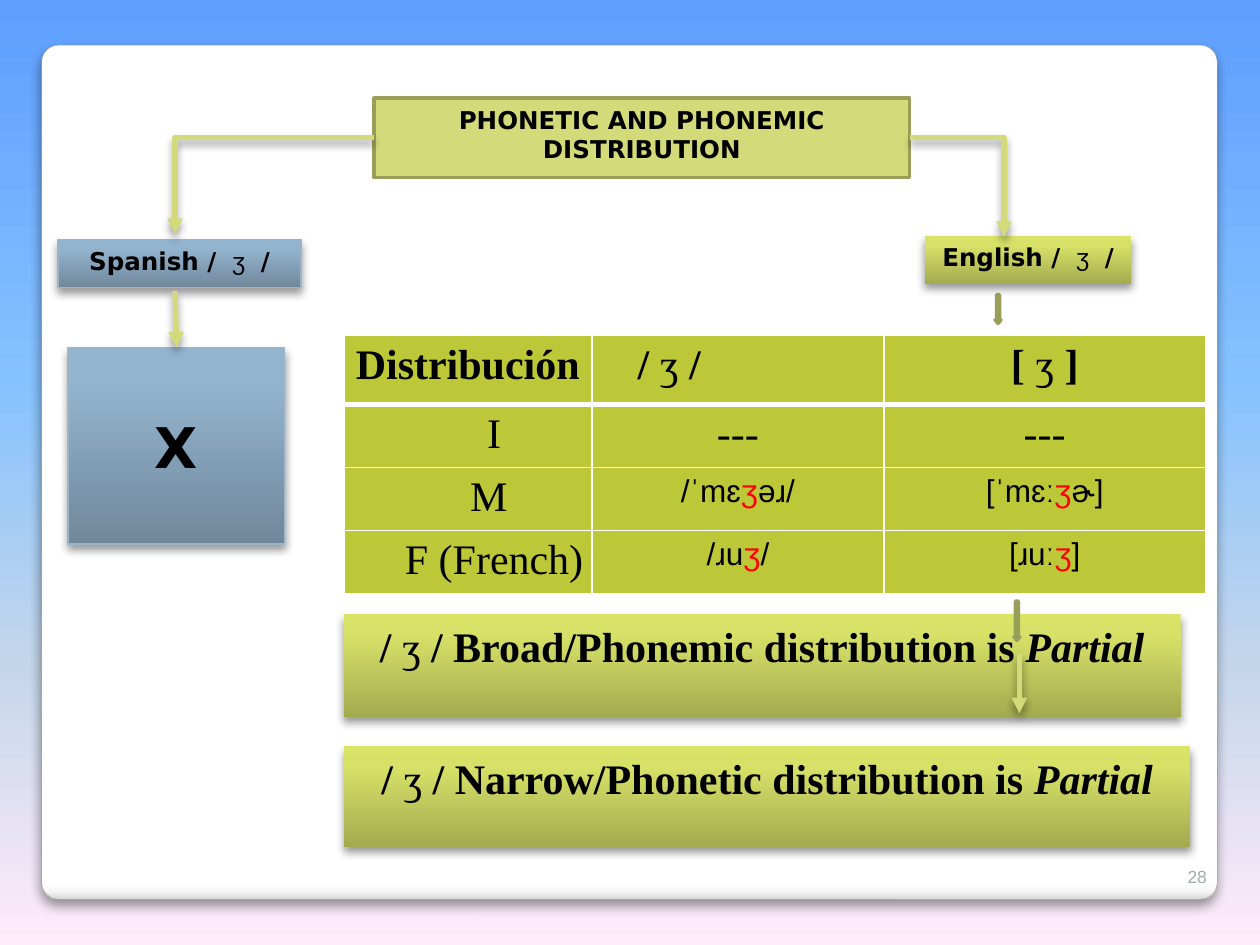
from dataclasses import dataclass

from lxml.etree import SubElement
from pptx import Presentation
from pptx.dml.color import RGBColor
from pptx.enum.shapes import MSO_CONNECTOR, MSO_SHAPE
from pptx.enum.text import MSO_ANCHOR, PP_ALIGN
from pptx.oxml.ns import qn
from pptx.util import Cm, Pt

BLACK = RGBColor(0, 0, 0)
WHITE = RGBColor(255, 255, 255)
RED = RGBColor(255, 0, 0)
PALE_GREEN = RGBColor(0xD2, 0xDA, 0x7A)
OLIVE = RGBColor(0x99, 0x9F, 0x59)
TABLE_GREEN = RGBColor(0xBC, 0xC8, 0x38)
BLUE_EDGE = RGBColor(0x9A, 0xB4, 0xC9)
PANEL_EDGE = RGBColor(0xA2, 0xA1, 0xA1)
NUMBER_GRAY = RGBColor(0xA1, 0xAA, 0xAC)
SKY = [(0, RGBColor(0x5E, 0x9E, 0xFF)), (40, RGBColor(0x85, 0xC2, 0xFF)),
       (70, RGBColor(0xC4, 0xD6, 0xEB)), (100, RGBColor(0xFF, 0xEB, 0xFA))]
PAPER = [(0, WHITE), (98, WHITE), (99, RGBColor(0xF7, 0xF7, 0xF7)),
         (100, RGBColor(0xD9, 0xD9, 0xD9))]
BLUE = [(0, RGBColor(0x93, 0xB4, 0xCF)), (20, RGBColor(0x93, 0xB3, 0xCD)),
        (100, RGBColor(0x70, 0x88, 0x9C))]
GREEN = [(0, RGBColor(0xDA, 0xE4, 0x66)), (20, RGBColor(0xD7, 0xE1, 0x68)),
         (100, RGBColor(0xA3, 0xAB, 0x4F))]
SANS, SERIF, MONO, ARIAL = "DejaVu Sans", "Times New Roman", "Courier New", "Arial"
INSET = 0.13


@dataclass
class Run:
    text: str
    size: float
    font: str
    bold: bool = False
    italic: bool = False
    color: RGBColor = BLACK


@dataclass
class Box:
    left: float
    top: float
    width: float
    height: float
    gradient: list
    runs: list
    edge: RGBColor | None = None
    anchor: MSO_ANCHOR = MSO_ANCHOR.TOP


@dataclass
class Entry:
    runs: list
    left: float = INSET
    right: float = INSET


def label(name: str) -> list:
    return [Run(f"{name} /", 14, SANS, True), Run(" ʒ ", 14, MONO),
            Run("/", 14, SANS, True)]


def conclusion(kind: str) -> list:
    return [Run("/ ", 24, SERIF, True), Run("ʒ ", 24, SERIF),
            Run(f"/ {kind} distribution is ", 24, SERIF, True),
            Run("Partial", 24, SERIF, True, True)]


def symbol(opening: str, closing: str) -> list:
    return [Run(f"{opening} ", 24, SERIF, True), Run("ʒ ", 24, SERIF),
            Run(closing, 24, SERIF, True)]


def word(before: str, after: str) -> list:
    return [Run(before, 18, ARIAL), Run("ʒ", 18, ARIAL, color=RED), Run(after, 18, ARIAL)]


def serif(text: str, bold: bool = False) -> list:
    return [Run(text, 24, SERIF, bold)]


def write(frame, runs: list, alignment=PP_ALIGN.CENTER) -> None:
    paragraph = frame.paragraphs[0]
    paragraph.alignment = alignment
    for item in runs:
        run = paragraph.add_run()
        run.text = item.text
        font = run.font
        font.size, font.name = Pt(item.size), item.font
        font.bold, font.italic = item.bold, item.italic
        font.color.rgb = item.color


def set_frame(frame, anchor=MSO_ANCHOR.TOP) -> None:
    frame.word_wrap = True
    frame.vertical_anchor = anchor
    frame.margin_left = frame.margin_right = Cm(INSET)
    frame.margin_top = frame.margin_bottom = Cm(INSET)


def set_gradient(fill, element, stops: list) -> None:
    fill.gradient()
    fill.gradient_angle = 270
    stop_list = next(element.iter(qn("a:gsLst")))
    for old in list(stop_list):
        stop_list.remove(old)
    for position, color in stops:
        stop = SubElement(stop_list, qn("a:gs"), pos=str(position * 1000))
        SubElement(stop, qn("a:srgbClr"), val=str(color))


def set_line(shape, color: RGBColor, width: float) -> None:
    shape.line.color.rgb = color
    shape.line.width = Pt(width)


def add_shadow(shape, blur: float = 5, distance: float = 3) -> None:
    properties = shape.element.spPr
    for old in properties.findall(qn("a:effectLst")):
        properties.remove(old)
    effects = SubElement(properties, qn("a:effectLst"))
    shadow = SubElement(effects, qn("a:outerShdw"), blurRad=str(Pt(blur)),
                        dist=str(Pt(distance)), dir="5400000", rotWithShape="0")
    color = SubElement(shadow, qn("a:srgbClr"), val=str(BLACK))
    SubElement(color, qn("a:alpha"), val="40000")


def style_arrow(shape) -> None:
    set_line(shape, PALE_GREEN, 3)
    SubElement(shape.line._get_or_add_ln(), qn("a:tailEnd"), type="triangle")
    add_shadow(shape)


def add_box(slide, box: Box) -> None:
    shape = slide.shapes.add_shape(MSO_SHAPE.RECTANGLE, Cm(box.left), Cm(box.top),
                                   Cm(box.width), Cm(box.height))
    set_gradient(shape.fill, shape.element, box.gradient)
    if box.edge is None:
        shape.line.fill.background()
    else:
        set_line(shape, box.edge, 0.75)
    add_shadow(shape)
    set_frame(shape.text_frame, box.anchor)
    write(shape.text_frame, box.runs)


def add_outline(slide, points: list, close: bool):
    (first_x, first_y), *rest = [(Cm(x), Cm(y)) for x, y in points]
    builder = slide.shapes.build_freeform(first_x, first_y)
    builder.add_line_segments(rest, close=close)
    shape = builder.convert_to_shape()
    shape.shadow.inherit = False
    return shape


def add_elbow(slide, points: list) -> None:
    shape = add_outline(slide, points, False)
    shape.fill.background()
    style_arrow(shape)


def add_block_arrow(slide, center: float, top: float, height: float) -> None:
    neck, tip = top + height - 0.07, top + height
    shape = add_outline(slide, [
        (center - 0.06, neck), (center - 0.03, neck), (center - 0.03, top),
        (center + 0.03, top), (center + 0.03, neck), (center + 0.06, neck),
        (center, tip)], True)
    shape.fill.solid()
    shape.fill.fore_color.rgb = PALE_GREEN
    set_line(shape, OLIVE, 2)


def add_straight_arrow(slide, start: tuple, end: tuple) -> None:
    connector = slide.shapes.add_connector(
        MSO_CONNECTOR.STRAIGHT, *(Cm(value) for value in start + end))
    style_arrow(connector)


def add_distribution_table(slide, rows: list) -> None:
    widths, heights = [5, 5.89, 6.48], [1.4, 1.27, 1.27, 1.27]
    table = slide.shapes.add_table(len(rows), len(widths), Cm(6.93), Cm(6.76),
                                   Cm(sum(widths)), Cm(sum(heights))).table
    for column, width in zip(table.columns, widths):
        column.width = Cm(width)
    for row_index, entries in enumerate(rows):
        table.rows[row_index].height = Cm(heights[row_index])
        for column_index, entry in enumerate(entries):
            cell = table.cell(row_index, column_index)
            cell.margin_left, cell.margin_right = Cm(entry.left), Cm(entry.right)
            cell.margin_top = cell.margin_bottom = Cm(INSET)
            borders = {"L": 1, "R": 1, "T": 3 if row_index == 1 else 1,
                       "B": 3 if row_index == 0 else 1}
            for side, width in borders.items():
                line = SubElement(cell._tc.get_or_add_tcPr(), qn(f"a:ln{side}"), w=str(Pt(width)))
                fill = SubElement(line, qn("a:solidFill"))
                SubElement(fill, qn("a:srgbClr"), val=str(WHITE))
            cell.fill.solid()
            cell.fill.fore_color.rgb = TABLE_GREEN
            write(cell.text_frame, entry.runs)


def main() -> None:
    presentation = Presentation()
    presentation.slide_width, presentation.slide_height = Cm(25.4), Cm(19.05)
    slide = presentation.slides.add_slide(presentation.slide_layouts[5])
    set_gradient(slide.background.fill, slide.element, SKY)

    panel = slide.shapes.add_shape(MSO_SHAPE.ROUNDED_RECTANGLE, Cm(0.84), Cm(0.91),
                                   Cm(23.7), Cm(17.22))
    panel.adjustments[0] = 0.02
    set_gradient(panel.fill, panel.element, PAPER)
    set_line(panel, PANEL_EDGE, 0.25)
    add_shadow(panel, 6, 4)
    panel.element.getparent().insert(2, panel.element)

    title = slide.shapes.title
    title.left, title.top, title.width, title.height = Cm(7.54), Cm(1.98), Cm(10.8), Cm(1.6)
    title.fill.solid()
    title.fill.fore_color.rgb = PALE_GREEN
    set_line(title, OLIVE, 2)
    set_frame(title.text_frame)
    write(title.text_frame, [Run("PHONETIC AND PHONEMIC DISTRIBUTION", 14, SANS, True)])

    add_distribution_table(slide, [
        [Entry(serif("Distribución", True)), Entry(symbol("/", "/"), right=2.9),
         Entry(symbol("[", "]"))],
        [Entry(serif("I"), left=1.19), Entry(serif("---")), Entry(serif("---"))],
        [Entry(serif("M"), left=0.98), Entry(word("/ˈmɛ", "əɹ/")), Entry(word("[ˈmɛː", "ɚ]"))],
        [Entry(serif("F (French)"), left=1.19), Entry(word("/ɹu", "/")),
         Entry(word("[ɹuː", "]"))]])

    for box in (
            Box(1.17, 4.83, 4.9, 0.97, BLUE, label("Spanish"), BLUE_EDGE),
            Box(18.64, 4.75, 4.17, 0.97, GREEN, label("English")),
            Box(6.93, 12.37, 16.87, 2.08, GREEN, conclusion("Broad/Phonemic")),
            Box(6.93, 15.04, 17.07, 2.03, GREEN, conclusion("Narrow/Phonetic")),
            Box(1.37, 7.01, 4.37, 3.96, BLUE, [Run("X", 32, SANS, True)], BLUE_EDGE,
                MSO_ANCHOR.MIDDLE)):
        add_box(slide, box)

    add_block_arrow(slide, 20.12, 5.94, 0.58)
    add_block_arrow(slide, 20.5, 12.12, 0.79)
    add_elbow(slide, [(7.54, 2.77), (3.53, 2.77), (3.53, 4.72)])
    add_straight_arrow(slide, (3.53, 5.87), (3.56, 7.01))
    add_elbow(slide, [(18.34, 2.77), (20.24, 2.77), (20.24, 4.78)])
    add_straight_arrow(slide, (20.55, 13.18), (20.55, 14.38))

    number = slide.shapes.add_textbox(Cm(23.19), Cm(17.37), Cm(1.27), Cm(0.64))
    set_frame(number.text_frame, MSO_ANCHOR.BOTTOM)
    write(number.text_frame, [Run("28", 10, ARIAL, color=NUMBER_GRAY)], PP_ALIGN.RIGHT)
    presentation.save("out.pptx")


if __name__ == "__main__":
    main()
